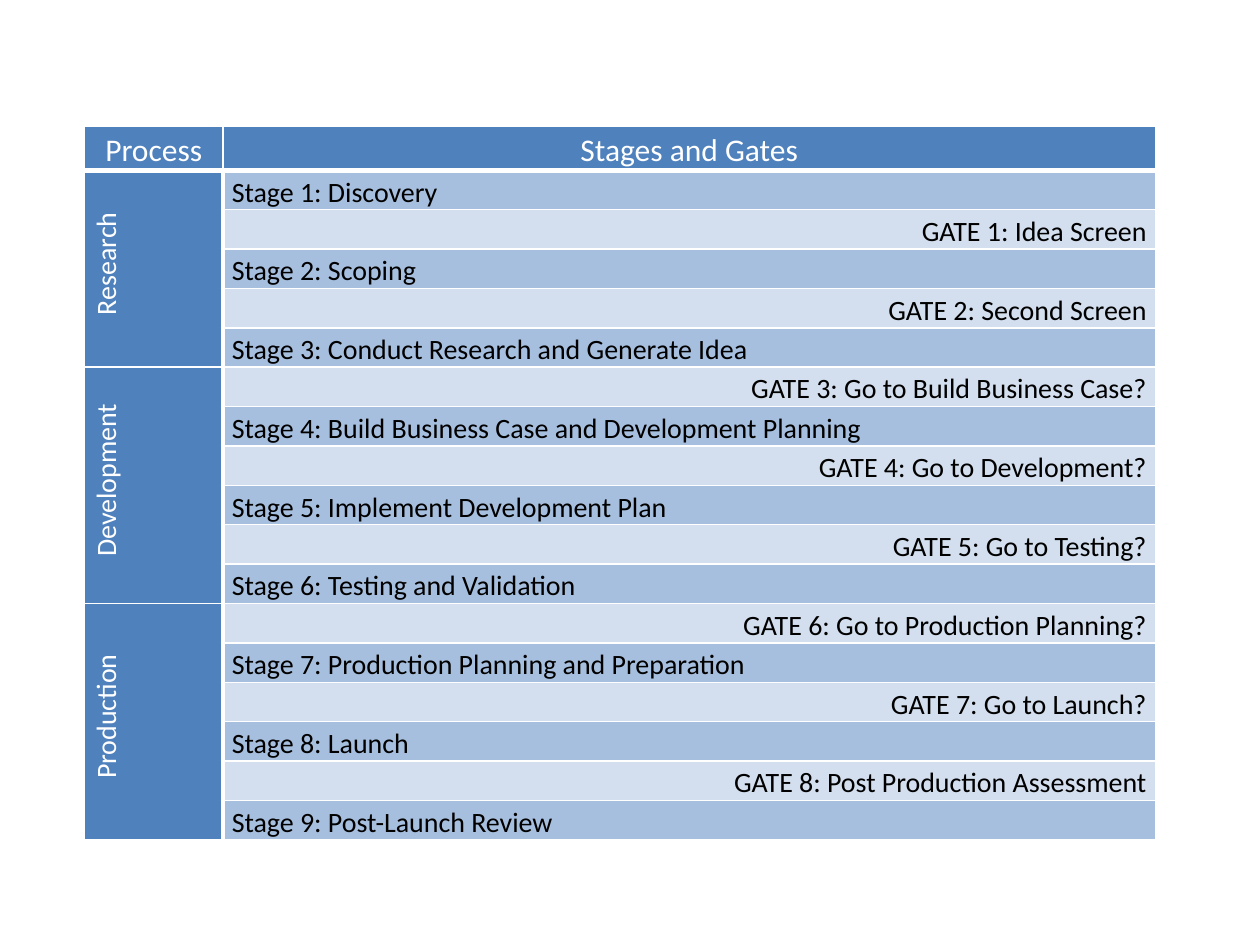
from lxml import etree
from pptx import Presentation
from pptx.dml.color import RGBColor
from pptx.enum.text import MSO_ANCHOR, PP_ALIGN
from pptx.oxml.ns import qn
from pptx.util import Inches, Pt

LEFT, CENTER, RIGHT = PP_ALIGN.LEFT, PP_ALIGN.CENTER, PP_ALIGN.RIGHT
TOP, MIDDLE = MSO_ANCHOR.TOP, MSO_ANCHOR.MIDDLE
WHITE, BLACK = "FFFFFF", "000000"
BLUE, STAGE_BLUE, GATE_BLUE = "4F81BD", "A7BFDE", "D3DFEE"
ROW_HEIGHT = 0.31

PROCESSES = [("Research", 5), ("Development", 6), ("Production", 6)]
STEPS = [
    "Stage 1: Discovery",
    "GATE 1: Idea Screen",
    "Stage 2: Scoping",
    "GATE 2: Second Screen",
    "Stage 3: Conduct Research and Generate Idea",
    "GATE 3: Go to Build Business Case?",
    "Stage 4: Build Business Case and Development Planning",
    "GATE 4: Go to Development?",
    "Stage 5: Implement Development Plan",
    "GATE 5: Go to Testing?",
    "Stage 6: Testing and Validation",
    "GATE 6: Go to Production Planning?",
    "Stage 7: Production Planning and Preparation",
    "GATE 7: Go to Launch?",
    "Stage 8: Launch",
    "GATE 8: Post Production Assessment",
    "Stage 9: Post-Launch Review",
]


def rgb(color):
    """Turn a hex string into a colour."""
    return RGBColor.from_string(color)


def set_borders(cell, **widths):
    """Draw white borders, 1 pt unless a side is given another width."""
    tc_pr = cell._tc.get_or_add_tcPr()
    for side in "LRTB":
        ln = etree.SubElement(tc_pr, qn(f"a:ln{side}"), w=str(Pt(widths.get(side, 1))))
        fill = etree.SubElement(ln, qn("a:solidFill"))
        etree.SubElement(fill, qn("a:srgbClr"), val=WHITE)


def format_cell(cell, fill, **borders):
    """Set the borders, fill and margins of a cell."""
    set_borders(cell, **borders)
    cell.fill.solid()
    cell.fill.fore_color.rgb = rgb(fill)
    margins = {"margin_left": 0.07, "margin_right": 0.07, "margin_top": 0, "margin_bottom": 0}
    for name, value in margins.items():
        setattr(cell, name, Inches(value))


def write_cell(cell, text, size, color, align, anchor=TOP):
    """Write one paragraph into a cell."""
    cell.vertical_anchor = anchor
    p = cell.text_frame.paragraphs[0]
    p.alignment, p.line_spacing = align, 1.15
    r = p.add_run()
    r.text = text
    for name, value in {"name": "Calibri", "size": Pt(size), "bold": False}.items():
        setattr(r.font, name, value)
    r.font.color.rgb = rgb(color)


def add_process(table, row, name, span):
    """Merge the rows of a process and write its name upwards."""
    for i in range(row, row + span):
        format_cell(table.cell(i, 0), BLUE, R=3, T=3 if i == 1 else 1)
    cell = table.cell(row, 0)
    if span > 1:
        cell.merge(table.cell(row + span - 1, 0))
    write_cell(cell, name, 16, WHITE, CENTER, MIDDLE)
    cell._tc.get_or_add_tcPr().set("vert", "vert270")
    cell.text_frame.paragraphs[0]._p.get_or_add_pPr().set("marL", str(Inches(0.08)))


def add_step(table, row, text):
    """Write a stage at the left or a gate at the right."""
    is_gate = text.startswith("GATE")
    cell = table.cell(row, 1)
    format_cell(cell, GATE_BLUE if is_gate else STAGE_BLUE, L=3, T=3 if row == 1 else 1)
    write_cell(cell, text, 16, BLACK, RIGHT if is_gate else LEFT)


def add_stage_gate_table(slide):
    """Add the table of processes, stages and gates."""
    rows = len(STEPS) + 1
    table = slide.shapes.add_table(
        rows, 2, Inches(0.67), Inches(1), Inches(8.5), Inches(ROW_HEIGHT * rows)
    ).table
    table.first_row = table.horz_banding = False
    for column, width in zip(table.columns, (1.1, 7.4)):
        column.width = Inches(width)
    for row in table.rows:
        row.height = Inches(ROW_HEIGHT)
    for col, (text, anchor) in enumerate([("Process", MIDDLE), ("Stages and Gates", TOP)]):
        format_cell(table.cell(0, col), BLUE, B=3)
        write_cell(table.cell(0, col), text, 18, WHITE, CENTER, anchor)
    row = 1
    for name, span in PROCESSES:
        add_process(table, row, name, span)
        row += span
    for row, text in enumerate(STEPS, 1):
        add_step(table, row, text)


def main():
    """Build and save the slide."""
    prs = Presentation()
    prs.slide_width, prs.slide_height = Inches(10), Inches(7.5)
    add_stage_gate_table(prs.slides.add_slide(prs.slide_layouts[6]))
    prs.save("out.pptx")


if __name__ == "__main__":
    main()
